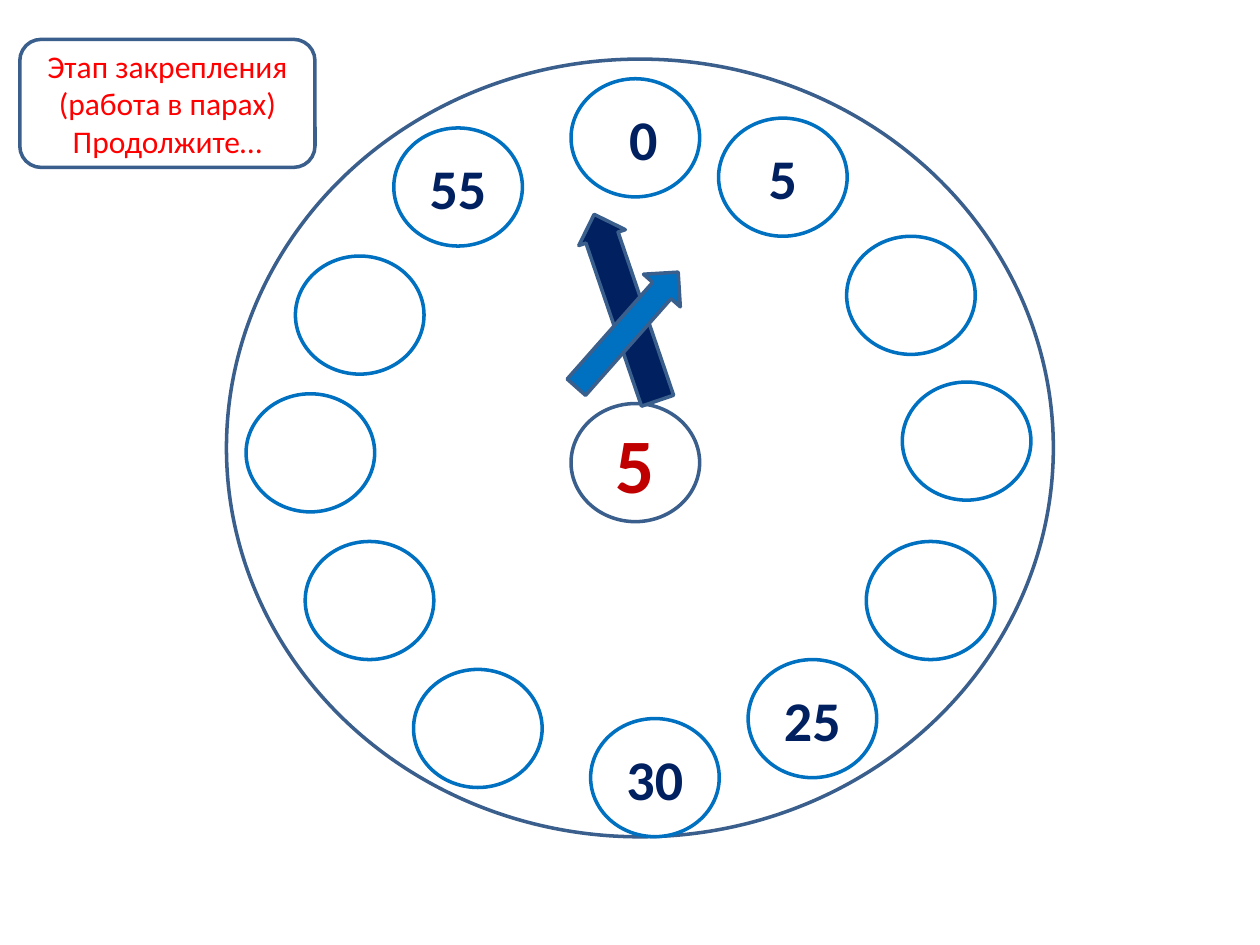
"""Build a clock-face slide for practising multiplication by five in pairs."""
from pptx import Presentation
from pptx.dml.color import RGBColor
from pptx.enum import shapes, text
from pptx.util import Pt

WHITE = RGBColor(0xFF, 0xFF, 0xFF)
STEEL = RGBColor(0x3A, 0x5F, 0x8C)
BLUE = RGBColor(0x00, 0x70, 0xC0)
NAVY = RGBColor(0x00, 0x20, 0x60)
CRIMSON = RGBColor(0xC0, 0x00, 0x00)
RED = RGBColor(0xFF, 0x00, 0x00)
KIND = shapes.MSO_SHAPE
MARK_WIDTH, MARK_HEIGHT = 73.5, 67.5

deck = Presentation()
deck.slide_width, deck.slide_height = Pt(720), Pt(540)
page = deck.slides.add_slide(deck.slide_layouts[6])


def add_outlined(kind, left, top, width, height, line=STEEL, fill=WHITE):
    shape = page.shapes.add_shape(kind, Pt(left), Pt(top), Pt(width), Pt(height))
    shape.shadow.inherit = False
    shape.fill.solid()
    shape.fill.fore_color.rgb = fill
    shape.line.color.rgb = line
    shape.line.width = Pt(2)
    return shape


def write(shape, lines, size, color, bold=False):
    frame = shape.text_frame
    frame.word_wrap = True
    frame.vertical_anchor = text.MSO_ANCHOR.MIDDLE
    for index, line in enumerate(lines):
        para = frame.add_paragraph() if index else frame.paragraphs[0]
        para.alignment = text.PP_ALIGN.CENTER
        span = para.add_run()
        span.text = line
        span.font.name = "Calibri"
        span.font.size = Pt(size)
        span.font.bold = bold
        span.font.color.rgb = color


add_outlined(KIND.OVAL, 129.4, 33.8, 472.5, 444.4)

minute_marks = [
    ("0", 326.3, 45),
    ("5", 410.6, 67.5),
    ("", 483.8, 135),
    ("", 515.6, 218.3),
    ("", 495, 309.4),
    ("25", 427.5, 376.9),
    ("30", 337.5, 410.6),
    ("", 236.3, 382.5),
    ("", 174.4, 309.4),
    ("", 140.6, 225),
    ("", 168.8, 146.3),
    ("55", 225, 73.1),
]
for label, left, top in minute_marks:
    mark = add_outlined(KIND.OVAL, left, top, MARK_WIDTH, MARK_HEIGHT, BLUE)
    if label:
        write(mark, [label], 32, NAVY, bold=True)
    if label == "0":
        mark.text_frame.margin_left = Pt(16.2)

multiplier = add_outlined(KIND.OVAL, 326.3, 230.6, MARK_WIDTH, MARK_HEIGHT)
write(multiplier, ["5"], 44, CRIMSON, bold=True)

minute_hand = add_outlined(KIND.UP_ARROW, 343.6, 119.5, 28.1, 112.5, fill=NAVY)
minute_hand.adjustments[0] = 0.69
minute_hand.rotation = 341.2
hour_hand = add_outlined(KIND.UP_ARROW, 344.4, 144.5, 28.1, 87.8, fill=BLUE)
hour_hand.rotation = 41.5

task = add_outlined(KIND.ROUNDED_RECTANGLE, 11.3, 22.5, 168.7, 73.2)
write(task, ["Этап закрепления", "(работа в парах)", "Продолжите…"], 18, RED)

deck.save("out.pptx")
